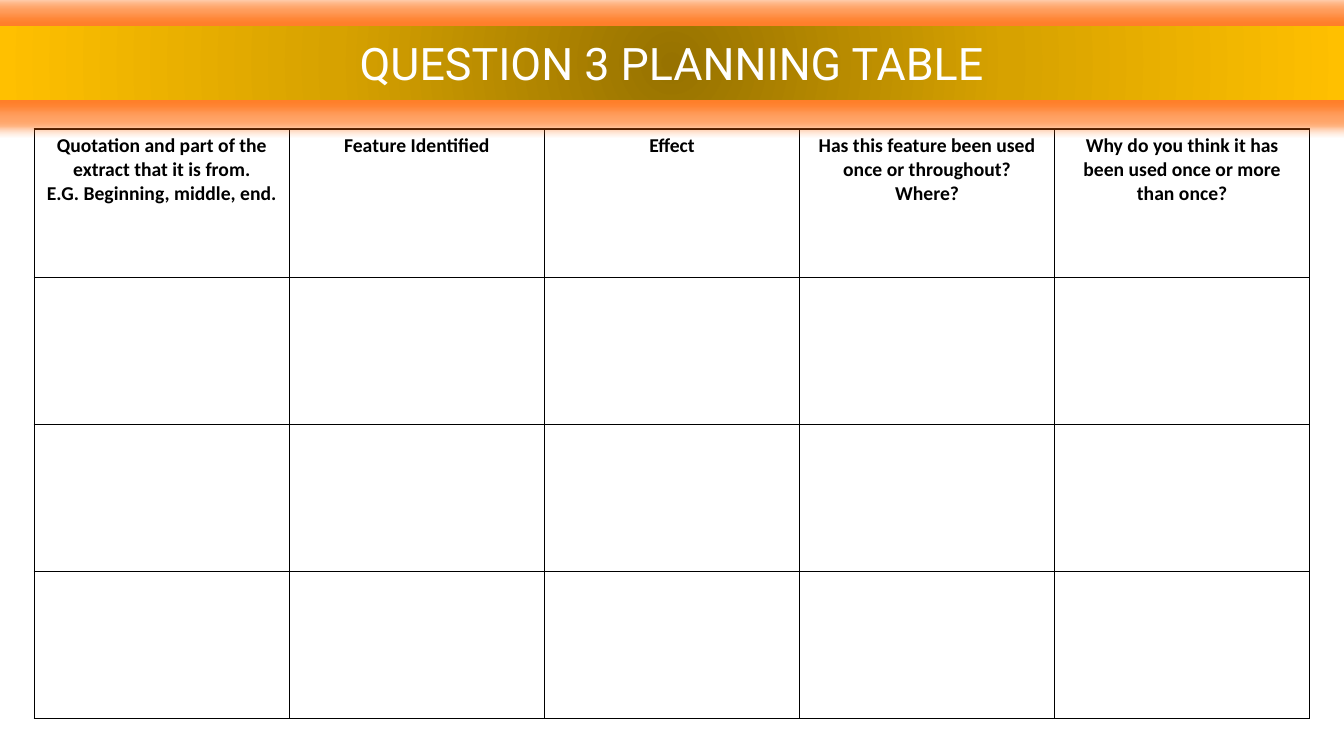
from dataclasses import dataclass

from pptx import Presentation
from pptx.dml.color import RGBColor
from pptx.enum.shapes import MSO_SHAPE
from pptx.enum.text import MSO_ANCHOR, PP_ALIGN
from pptx.oxml import parse_xml
from pptx.oxml.ns import nsdecls, qn
from pptx.slide import Slide
from pptx.table import _Cell
from pptx.text.text import _Paragraph
from pptx.util import Inches, Pt

RECTANGLE = MSO_SHAPE.RECTANGLE
CENTER = PP_ALIGN.CENTER
MIDDLE = MSO_ANCHOR.MIDDLE

BLACK, WHITE = "000000", "FFFFFF"
GOLD_STOPS = ((0, "977200"), (50, "D7A200"), (100, "FFC000"))
GLOW_COLOR = "FF6600"
BORDER_SIDES = ("lnL", "lnR", "lnT", "lnB")
ROW_HEIGHTS = (1.47, 1.46, 1.46, 1.46)
COLUMN_WIDTH = 2.53


@dataclass(frozen=True)
class TextStyle:
    font: str
    size: float
    color: str
    bold: bool = False


@dataclass(frozen=True)
class Heading:
    lines: tuple[str, ...]


TITLE_STYLE = TextStyle("Roboto", 32, WHITE)
HEADING_STYLE = TextStyle("Calibri", 14, BLACK, bold=True)
HEADINGS = (
    Heading(("Quotation and part of the extract that it is from.",
             "E.G. Beginning, middle, end.")),
    Heading(("Feature Identified",)),
    Heading(("Effect",)),
    Heading(("Has this feature been used once or throughout? Where?",)),
    Heading(("Why do you think it has been used once or more than once?",)),
)


def rgb(color: str) -> RGBColor:
    return RGBColor.from_string(color)


def write_centered(paragraph: _Paragraph, text: str, style: TextStyle) -> None:
    paragraph.alignment = CENTER
    run = paragraph.add_run()
    run.text = text
    run.font.name = style.font
    run.font.size = Pt(style.size)
    run.font.bold = style.bold
    run.font.color.rgb = rgb(style.color)


def style_cell(cell: _Cell) -> None:
    """Give the cell black borders and no fill."""
    properties = cell._tc.get_or_add_tcPr()
    for side in BORDER_SIDES:
        properties.append(parse_xml(
            f'<a:{side} {nsdecls("a")} w="{Pt(1)}"><a:solidFill>'
            f'<a:srgbClr val="{BLACK}"/></a:solidFill></a:{side}>'))
    cell.fill.background()


def add_planning_table(slide: Slide) -> None:
    frame = slide.shapes.add_table(
        len(ROW_HEIGHTS), len(HEADINGS), Inches(0.34), Inches(1.28),
        Inches(COLUMN_WIDTH * len(HEADINGS)), Inches(sum(ROW_HEIGHTS)))
    table = frame.table
    table.first_row = False
    table.horz_banding = False
    for column in table.columns:
        column.width = Inches(COLUMN_WIDTH)
    for row, height in zip(table.rows, ROW_HEIGHTS):
        row.height = Inches(height)
    for cell in table.iter_cells():
        style_cell(cell)
    for column_index, heading in enumerate(HEADINGS):
        text_frame = table.cell(0, column_index).text_frame
        for line_index, line in enumerate(heading.lines):
            paragraph = (text_frame.add_paragraph() if line_index
                         else text_frame.paragraphs[0])
            write_centered(paragraph, line, HEADING_STYLE)


def add_title_banner(slide: Slide, title: str) -> None:
    """Add the full-width band with a radial gold fill and an orange glow."""
    banner = slide.shapes.add_shape(
        RECTANGLE, Inches(0), Inches(0.26), Inches(13.33), Inches(0.73))
    banner.shadow.inherit = False
    banner.line.fill.background()
    banner.fill.gradient()

    stops = "".join(
        f'<a:gs pos="{position * 1000}"><a:srgbClr val="{color}"/></a:gs>'
        for position, color in GOLD_STOPS)
    properties = banner._element.spPr
    properties.replace(properties.find(qn("a:gradFill")), parse_xml(
        f'<a:gradFill {nsdecls("a")}><a:gsLst>{stops}</a:gsLst>'
        '<a:path path="circle"><a:fillToRect l="50000" t="50000" '
        'r="50000" b="50000"/></a:path></a:gradFill>'))
    properties.find(qn("a:effectLst")).append(parse_xml(
        f'<a:glow {nsdecls("a")} rad="{Inches(0.19)}">'
        f'<a:srgbClr val="{GLOW_COLOR}"><a:alpha val="60000"/></a:srgbClr>'
        '</a:glow>'))

    text_frame = banner.text_frame
    text_frame.word_wrap = True
    text_frame.vertical_anchor = MIDDLE
    write_centered(text_frame.paragraphs[0], title, TITLE_STYLE)


def main() -> None:
    presentation = Presentation()
    presentation.slide_width = Inches(13.33)
    presentation.slide_height = Inches(7.5)
    slide = presentation.slides.add_slide(presentation.slide_layouts[6])
    add_planning_table(slide)
    add_title_banner(slide, "QUESTION 3 PLANNING TABLE")
    presentation.save("out.pptx")


if __name__ == "__main__":
    main()
